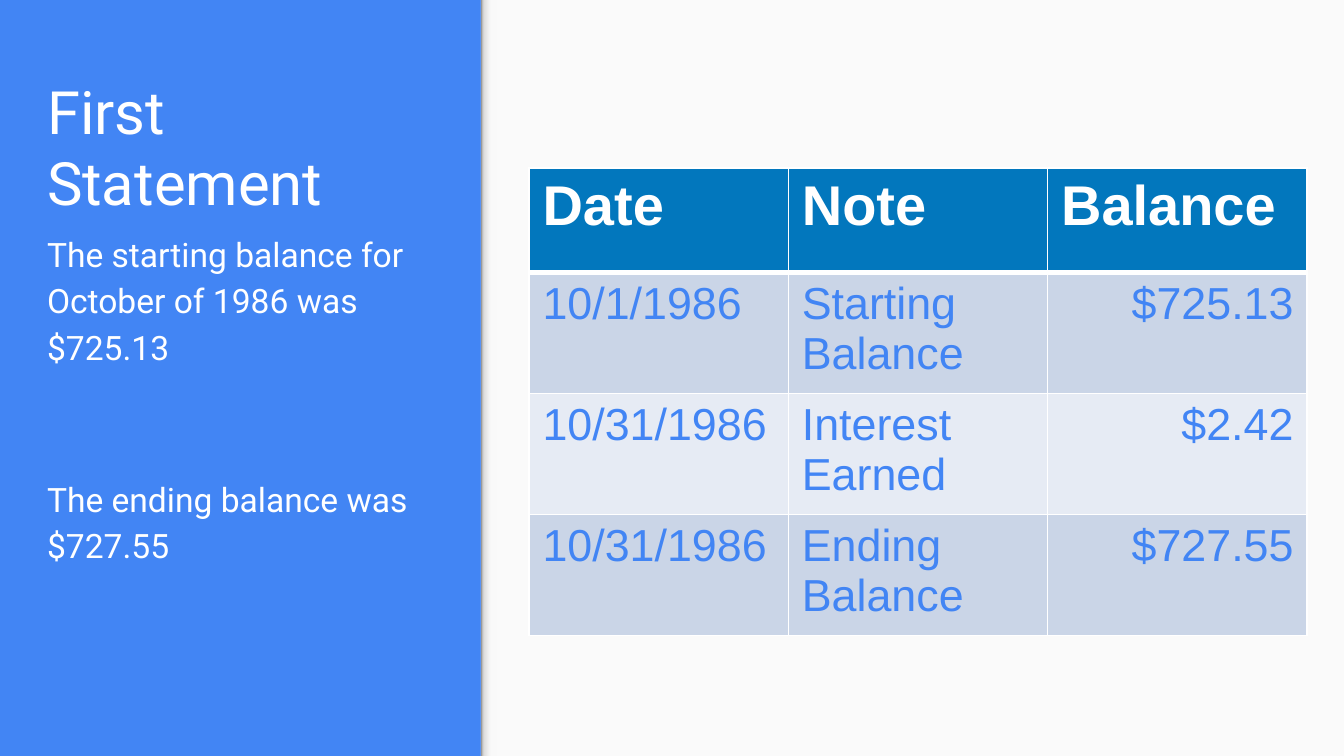
from copy import deepcopy

from lxml import etree
from pptx import Presentation
from pptx import util as u
from pptx.dml.color import RGBColor
from pptx.enum import shapes, text
from pptx.oxml import ns

BLUE, WHITE = "4285F4", "FFFFFF"
HEADER, DARK_BAND, LIGHT_BAND = "0277BD", "CAD5E7", "E6EBF4"
WIDTH, HEIGHT = 25.4, 14.29
PANEL_LEFT = 9.09


def color(value):
    return RGBColor.from_string(value)


class StatementSlide:
    text_font = "Roboto"
    table_font = "Arial"

    def __init__(self, deck):
        self.page = deck.slides.add_slide(deck.slide_layouts[6])
        self.paint(self.page.background.fill, BLUE)

    def paint(self, fill, value):
        fill.solid()
        fill.fore_color.rgb = color(value)

    def style(self, para, font, size, value, bold=False):
        para.font.name = font
        para.font.size = u.Pt(size)
        para.font.color.rgb = color(value)
        para.font.bold = bold

    def rectangle(self, left, top, width, height):
        shape = self.page.shapes.add_shape(
            shapes.MSO_SHAPE.RECTANGLE, u.Cm(left), u.Cm(top), u.Cm(width), u.Cm(height))
        shape.shadow.inherit = False
        shape.line.fill.background()
        return shape

    def panel(self, left, top, width, height, value):
        self.paint(self.rectangle(left, top, width, height).fill, value)

    def edge_shadow(self, left, thickness, length, stops):
        strip = self.rectangle(
            left + (thickness - length) / 2, (length - thickness) / 2, length, thickness)
        strip.rotation = 270
        strip.fill.gradient()
        strip.fill.gradient_angle = 90
        stop_list = strip.element.spPr.find(".//" + ns.qn("a:gsLst"))
        for _ in range(len(stops) - len(stop_list)):
            stop_list.append(deepcopy(stop_list[0]))
        for stop, (position, value) in zip(stop_list, stops):
            stop.set("pos", str(position * 1000))
            for child in list(stop):
                stop.remove(child)
            etree.SubElement(stop, ns.qn("a:srgbClr"), val=value)

    def text_box(self, left, top, width, height, lines, size, anchor, spacing=1.0, gap=0):
        box = self.page.shapes.add_textbox(u.Cm(left), u.Cm(top), u.Cm(width), u.Cm(height))
        frame = box.text_frame
        frame.word_wrap = True
        frame.vertical_anchor = anchor
        frame.margin_left = frame.margin_right = u.Cm(0.25)
        frame.margin_top = frame.margin_bottom = u.Cm(0.25)
        for index, line in enumerate(lines):
            para = frame.paragraphs[0] if index == 0 else frame.add_paragraph()
            para.text = line
            para.line_spacing = spacing
            para.space_before = u.Pt(gap if index else 0)
            self.style(para, self.text_font, size, WHITE)

    def borders(self, cell, widths):
        properties = cell._tc.get_or_add_tcPr()
        for side, width in widths.items():
            line = etree.SubElement(properties, ns.qn("a:ln" + side), w=str(u.Pt(width)))
            fill = etree.SubElement(line, ns.qn("a:solidFill"))
            etree.SubElement(fill, ns.qn("a:srgbClr"), val=WHITE)

    def table(self, left, top, column_width, row_height, rows):
        columns = len(rows[0])
        grid = self.page.shapes.add_table(
            len(rows), columns, u.Cm(left), u.Cm(top),
            u.Cm(column_width * columns), u.Cm(row_height * len(rows))).table
        for row, values in enumerate(rows):
            for column, value in enumerate(values):
                cell = grid.cell(row, column)
                cell.text = value
                self.borders(cell, {"L": 1, "R": 1,
                                    "T": 3 if row == 1 else 1,
                                    "B": 3 if row == 0 else 1})
                para = cell.text_frame.paragraphs[0]
                if row == 0:
                    self.paint(cell.fill, HEADER)
                    self.style(para, self.table_font, 30, WHITE, bold=True)
                else:
                    self.paint(cell.fill, DARK_BAND if row % 2 else LIGHT_BAND)
                    self.style(para, self.table_font, 24, BLUE)
                    if column == columns - 1:
                        para.alignment = text.PP_ALIGN.RIGHT


def main():
    deck = Presentation()
    deck.slide_width, deck.slide_height = u.Cm(WIDTH), u.Cm(HEIGHT)

    slide = StatementSlide(deck)
    slide.panel(PANEL_LEFT, 0, WIDTH - PANEL_LEFT, HEIGHT, "FAFAFA")
    slide.edge_shadow(PANEL_LEFT, 0.3, HEIGHT,
                      [(0, "F9F9F9"), (36, "F9F9F9"), (80, "DEDEDE"), (100, "999999")])
    slide.text_box(0.64, 0.99, 7.8, 3.38, ["First Statement"], 32, text.MSO_ANCHOR.BOTTOM)
    slide.text_box(0.64, 4.06, 7.8, 8.79,
                   ["The starting balance for October of 1986 was $725.13",
                    "The ending balance was $727.55"],
                   18, text.MSO_ANCHOR.TOP, spacing=1.15, gap=56.5)
    slide.table(10, 3.18, 4.9, 1.97, [
        ("Date", "Note", "Balance"),
        ("10/1/1986", "Starting Balance", "$725.13"),
        ("10/31/1986", "Interest Earned", "$2.42"),
        ("10/31/1986", "Ending Balance", "$727.55"),
    ])
    deck.save("out.pptx")


if __name__ == "__main__":
    main()
